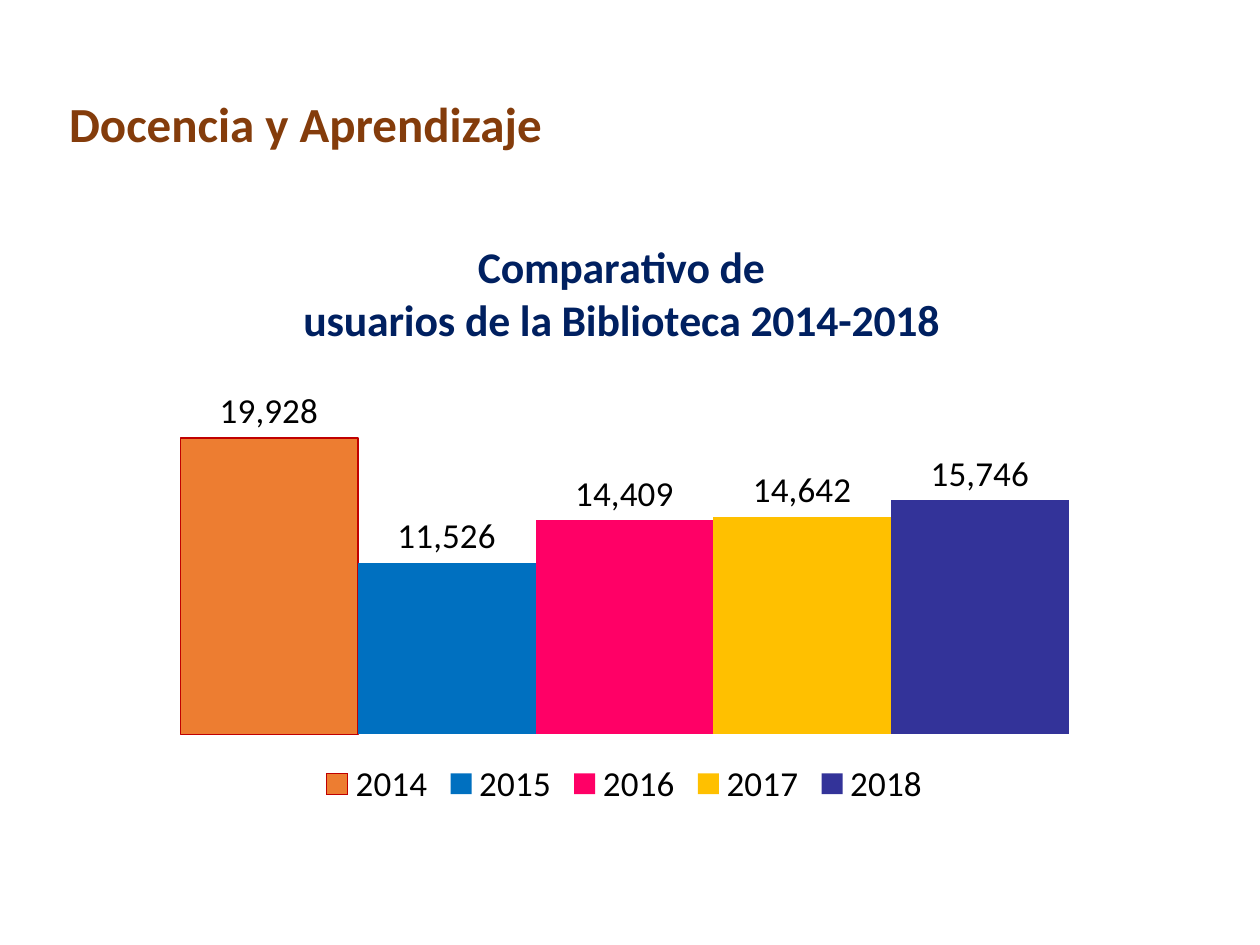
from dataclasses import dataclass
from typing import Optional

from lxml.etree import SubElement as Sub
from pptx import Presentation
from pptx.chart.data import CategoryChartData as Data
from pptx.chart.series import BarSeries
from pptx.dml.color import RGBColor as Rgb
from pptx.enum.chart import XL_CHART_TYPE as Kind
from pptx.enum.chart import XL_LABEL_POSITION as Spot
from pptx.enum.chart import XL_LEGEND_POSITION as Side
from pptx.enum.text import MSO_ANCHOR as Anchor
from pptx.enum.text import PP_ALIGN as Align
from pptx.oxml.ns import qn
from pptx.util import Cm, Pt


@dataclass(frozen=True)
class Theme:
    face: str = "Calibri"
    ink: str = "000000"
    brown: str = "843C0B"
    navy: str = "002060"
    head: float = 28
    title: float = 25
    label: float = 20
    base: float = 10


@dataclass(frozen=True)
class Bar:
    year: str
    users: int
    fill: str
    edge: Optional[str] = None


THEME = Theme()
FORMAT = "#,##0"
BARS = [
    Bar("2014", 19928, "ED7D31", "C00000"),
    Bar("2015", 11526, "0070C0"),
    Bar("2016", 14409, "FF0066"),
    Bar("2017", 14642, "FFC000"),
    Bar("2018", 15746, "333399"),
]


def style(font, size: float, color: str, bold: bool = False) -> None:
    font.name, font.size, font.bold = THEME.face, Pt(size), bold
    font.color.rgb = Rgb.from_string(color)


def write(frame, text: str, *, size: float, color: str,
          bold: bool = False, align: Align = Align.LEFT) -> None:
    """Put each line of text in its own paragraph."""
    for i, line in enumerate(text.split("\n")):
        para = frame.add_paragraph() if i else frame.paragraphs[0]
        para.alignment = align
        run = para.add_run()
        run.text = line
        style(run.font, size, color, bold)


def place(part, index: int, **spots: float) -> None:
    """Give a chart part a fixed layout, in fractions of the chart."""
    for old in part.findall(qn("c:layout")):
        part.remove(old)
    box = part.makeelement(qn("c:layout"))
    part.insert(index, box)
    manual = Sub(box, qn("c:manualLayout"))
    if "w" in spots:
        Sub(manual, qn("c:layoutTarget")).set("val", "inner")
    for axis in ("x", "y"):
        Sub(manual, qn(f"c:{axis}Mode")).set("val", "edge")
    for key, value in spots.items():
        Sub(manual, qn(f"c:{key}")).set("val", str(value))


def paint(series: BarSeries, bar: Bar) -> None:
    series.format.fill.solid()
    series.format.fill.fore_color.rgb = Rgb.from_string(bar.fill)
    line = series.format.line
    if bar.edge:
        line.color.rgb = Rgb.from_string(bar.edge)
        line.width = Pt(0.75)
    else:
        line.fill.background()
    labels = series.data_labels
    labels.show_value = True
    labels.number_format, labels.number_format_is_linked = FORMAT, False
    labels.position = Spot.OUTSIDE_END
    style(labels.font, THEME.label, THEME.ink)


def plot(slide, bars: list[Bar]) -> None:
    data = Data(number_format=FORMAT)
    data.categories = ["1"]
    for bar in bars:
        data.add_series(bar.year, [bar.users])
    chart = slide.shapes.add_chart(
        Kind.COLUMN_CLUSTERED, Cm(0.46), Cm(4.29), Cm(24.26), Cm(12.09), data
    ).chart
    style(chart.font, THEME.base, THEME.ink)

    # Columns
    columns = chart.plots[0]
    columns.gap_width, columns.overlap = 150, 0
    columns.vary_by_categories = False
    for series, bar in zip(columns.series, bars):
        paint(series, bar)

    # Hidden axes
    scale = chart.value_axis
    scale.minimum_scale, scale.maximum_scale = 0, 25000
    scale.has_major_gridlines = False
    scale.tick_labels.number_format = FORMAT
    scale.tick_labels.number_format_is_linked = False
    scale.visible = chart.category_axis.visible = False
    area = next(chart.element.iter(qn("c:plotArea")))
    place(area, 0, x=0.02, y=0.25, w=0.96, h=0.62)

    # Chart title
    chart.has_title = True
    write(chart.chart_title.text_frame,
          "Comparativo de\nusuarios de la Biblioteca 2014-2018",
          size=THEME.title, color=THEME.navy, bold=True, align=Align.CENTER)
    place(next(chart.element.iter(qn("c:title"))), 1, x=0.23, y=0.04)

    # Legend
    chart.has_legend = True
    chart.legend.position = Side.BOTTOM
    chart.legend.include_in_layout = False
    style(chart.legend.font, THEME.label, THEME.ink)


def main() -> None:
    deck = Presentation()
    deck.slide_width, deck.slide_height = Cm(25.4), Cm(19.05)
    slide = deck.slides.add_slide(deck.slide_layouts[5])

    # Slide title
    head = slide.shapes.title
    head.left, head.top = Cm(1.14), Cm(1.75)
    head.width, head.height = Cm(15.14), Cm(1.45)
    head.text_frame.vertical_anchor = Anchor.TOP
    write(head.text_frame, "Docencia y Aprendizaje",
          size=THEME.head, color=THEME.brown, bold=True)

    plot(slide, BARS)
    deck.save("out.pptx")


if __name__ == "__main__":
    main()
